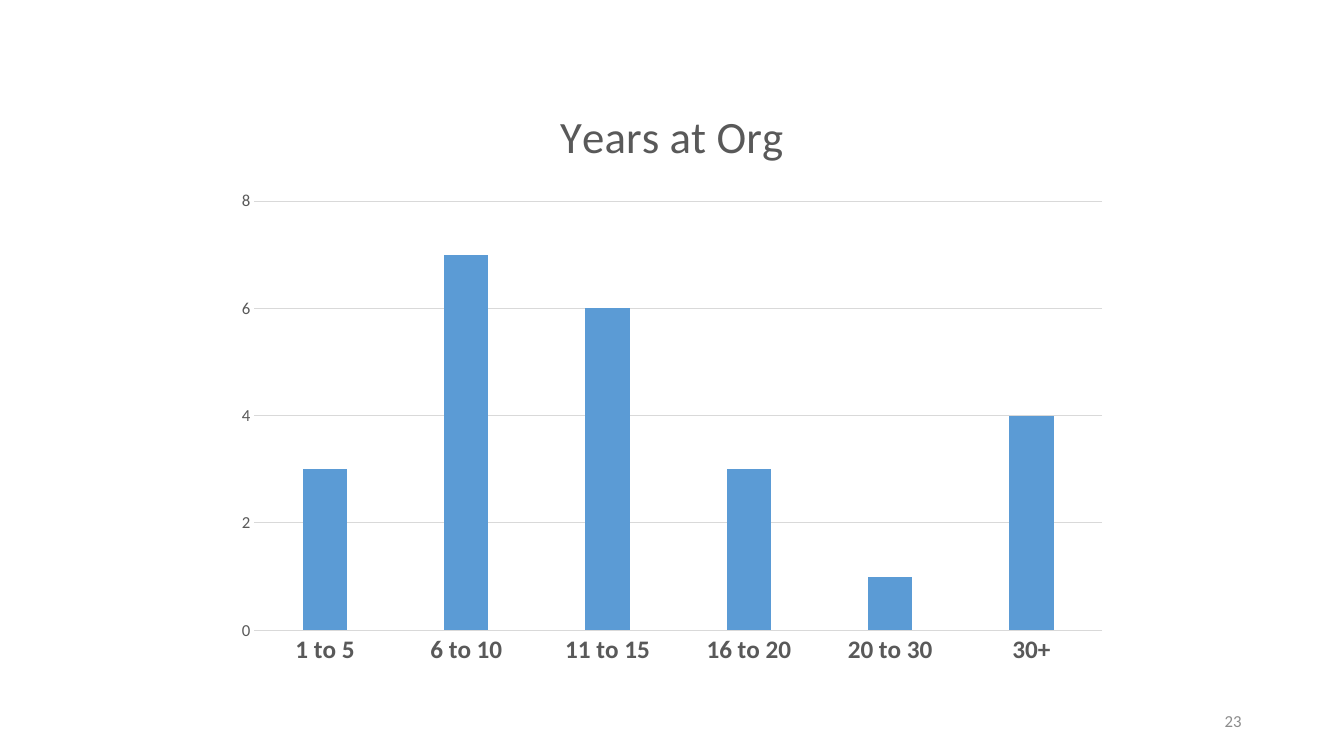
"""Build a slide with a column chart of years of service."""
from pptx import Presentation
from pptx.chart.data import CategoryChartData
from pptx.dml.color import RGBColor
from pptx.enum.chart import XL_CHART_TYPE, XL_TICK_MARK
from pptx.enum.text import MSO_ANCHOR, PP_ALIGN
from pptx.util import Pt

HUES = {"bar": "5B9BD5", "text": "595959", "grid": "D9D9D9", "page": "8C8C8C"}
YEARS = {"1 to 5": 3, "6 to 10": 7, "11 to 15": 6,
         "16 to 20": 3, "20 to 30": 1, "30+": 4}


def style(font, size, hue, bold=False):
    font.name = "Calibri"
    font.size = Pt(size)
    font.bold = bold
    font.color.rgb = RGBColor.from_string(HUES[hue])


deck = Presentation()
deck.slide_width, deck.slide_height = Pt(960), Pt(540)
slide = deck.slides.add_slide(deck.slide_layouts[6])

data = CategoryChartData()
data.categories = list(YEARS)
data.add_series("Series 1", list(YEARS.values()))
chart = slide.shapes.add_chart(
    XL_CHART_TYPE.COLUMN_CLUSTERED,
    Pt(160), Pt(56.67), Pt(640), Pt(426.67), data).chart
style(chart.font, 10, "text")
chart.has_legend = False

title = chart.chart_title.text_frame.paragraphs[0].add_run()
title.text = "Years at Org"
style(title.font, 32, "text")
chart.chart_title.include_in_layout = False

plot = chart.plots[0]
plot.gap_width = 219
plot.overlap = -27
plot.vary_by_categories = False
bars = plot.series[0]
bars.format.fill.solid()
bars.format.fill.fore_color.rgb = RGBColor.from_string(HUES["bar"])

groups, scale = chart.category_axis, chart.value_axis
style(groups.tick_labels.font, 18, "text", True)
style(scale.tick_labels.font, 12, "text")
scale.minimum_scale, scale.maximum_scale, scale.major_unit = 0, 8, 2
scale.has_major_gridlines = True
scale.format.line.fill.background()
for axis in (groups, scale):
    axis.major_tick_mark = axis.minor_tick_mark = XL_TICK_MARK.NONE
for rule in (groups.format.line, scale.major_gridlines.format.line):
    rule.color.rgb = RGBColor.from_string(HUES["grid"])
    rule.width = Pt(0.75)

frame = slide.shapes.add_textbox(Pt(678), Pt(500.5), Pt(216), Pt(28.75)).text_frame
frame.word_wrap = True
frame.vertical_anchor = MSO_ANCHOR.MIDDLE
line = frame.paragraphs[0]
line.alignment = PP_ALIGN.RIGHT
page = line.add_run()
page.text = "23"
style(page.font, 12, "page")

deck.save("out.pptx")
